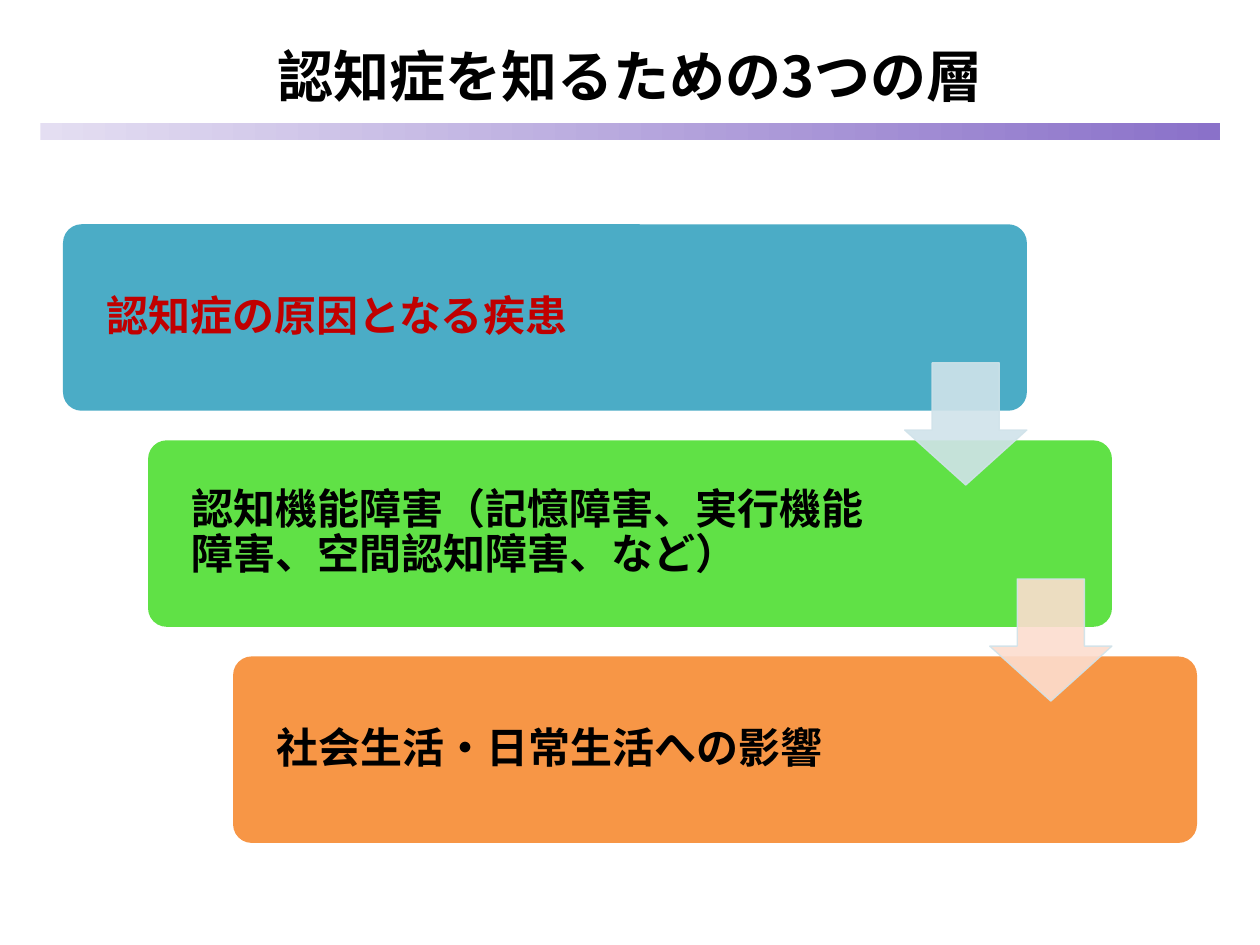
from lxml.etree import SubElement
from pptx import Presentation
from pptx.dml.color import RGBColor
from pptx.enum.shapes import MSO_SHAPE
from pptx.enum.text import MSO_ANCHOR, MSO_AUTO_SIZE, PP_ALIGN
from pptx.oxml.ns import qn
from pptx.util import Inches, Pt

FONT = "Noto Sans CJK JP"
COLORS = {
    "black": "000000", "red": "C00000",
    "teal": "4BACC6", "green": "60E146", "orange": "F79646",
    "pale blue": "D0E3EA", "pale pink": "FCDDCF",
    "bar start": "E4DEF2", "bar end": "8A71C9",
}
LAYERS = [
    (["認知症の原因となる疾患"], "teal", "red"),
    (["認知機能障害（記憶障害、実行機能", "障害、空間認知障害、など）"], "green", "black"),
    (["社会生活・日常生活への影響"], "orange", "black"),
]
ARROW_COLORS = ["pale blue", "pale pink"]


def color(name):
    """Return the named colour."""
    return RGBColor.from_string(COLORS[name])


def write_lines(frame, lines, size, ink, align):
    """Fill a text frame with one bold paragraph per line."""
    frame.word_wrap = True
    frame.auto_size = MSO_AUTO_SIZE.NONE
    frame.vertical_anchor = MSO_ANCHOR.MIDDLE
    frame.text = "\n".join(lines)
    for para in frame.paragraphs:
        para.alignment = align
        para.font.size = Pt(size)
        para.font.bold = True
        para.font.color.rgb = color(ink)
        para.font.name = FONT
        defaults = para._p.pPr.find(qn("a:defRPr"))
        SubElement(defaults, qn("a:ea")).set("typeface", FONT)


def add_title(page, left, top, width, height):
    """Place the title and the gradient bar under it."""
    title = page.shapes.title
    title.left, title.top, title.width, title.height = left, top, width, height
    write_lines(title.text_frame, ["認知症を知るための3つの層"], 32, "black", PP_ALIGN.CENTER)
    overhang = Inches(0.18)
    bar = page.shapes.add_shape(MSO_SHAPE.RECTANGLE, left - overhang, top + height,
                                width + 2 * overhang, Inches(0.13))
    bar.shadow.inherit = False
    bar.line.fill.background()
    bar.fill.gradient()
    bar.fill.gradient_angle = 0
    for stop, name in zip(bar.fill.gradient_stops, ["bar start", "bar end"]):
        stop.color.rgb = color(name)


def add_layer(page, left, top, width, height, lines, fill, ink):
    """Add one rounded box holding the text of a layer."""
    box = page.shapes.add_shape(MSO_SHAPE.ROUNDED_RECTANGLE, left, top, width, height)
    box.adjustments[0] = 0.1
    box.shadow.inherit = False
    box.fill.solid()
    box.fill.fore_color.rgb = color(fill)
    box.line.fill.background()
    frame = box.text_frame
    frame.margin_left, frame.margin_right = Inches(0.3), Inches(1.3)
    write_lines(frame, lines, 24, ink, PP_ALIGN.LEFT)
    for para in frame.paragraphs:
        para.line_spacing = 0.9


def add_arrow(page, left, top, size, fill):
    """Add a translucent arrow pointing to the next layer."""
    arrow = page.shapes.add_shape(MSO_SHAPE.DOWN_ARROW, left, top, size, size)
    arrow.adjustments[0], arrow.adjustments[1] = 0.55, 0.45
    arrow.shadow.inherit = False
    arrow.fill.solid()
    arrow.fill.fore_color.rgb = color(fill)
    arrow.line.color.rgb = color("pale blue")
    arrow.line.width = Pt(0.75)
    for tint in arrow._element.spPr.iter(qn("a:srgbClr")):
        SubElement(tint, qn("a:alpha")).set("val", "90000")


def add_staircase(page, left, top, width, height):
    """Step the layers down to the right and join them with arrows."""
    box_width, box_height, arrow_size = Inches(7.65), Inches(1.48), Inches(0.97)
    gaps = len(LAYERS) - 1
    step_x, step_y = (width - box_width) // gaps, (height - box_height) // gaps
    corners = [(left + i * step_x, top + i * step_y) for i in range(len(LAYERS))]
    for (x, y), layer in zip(corners, LAYERS):
        add_layer(page, x, y, box_width, box_height, *layer)
    for (x, y), fill in zip(corners, ARROW_COLORS):
        add_arrow(page, x + box_width - arrow_size, y + Inches(1.1), arrow_size, fill)


def main():
    """Build and save the deck."""
    deck = Presentation()
    deck.slide_width, deck.slide_height = Inches(10), Inches(7.5)
    page = deck.slides.add_slide(deck.slide_layouts[5])
    add_title(page, Inches(0.5), Inches(0.21), Inches(9), Inches(0.77))
    add_staircase(page, Inches(0.5), Inches(1.78), Inches(9), Inches(4.91))
    deck.save("out.pptx")


if __name__ == "__main__":
    main()
